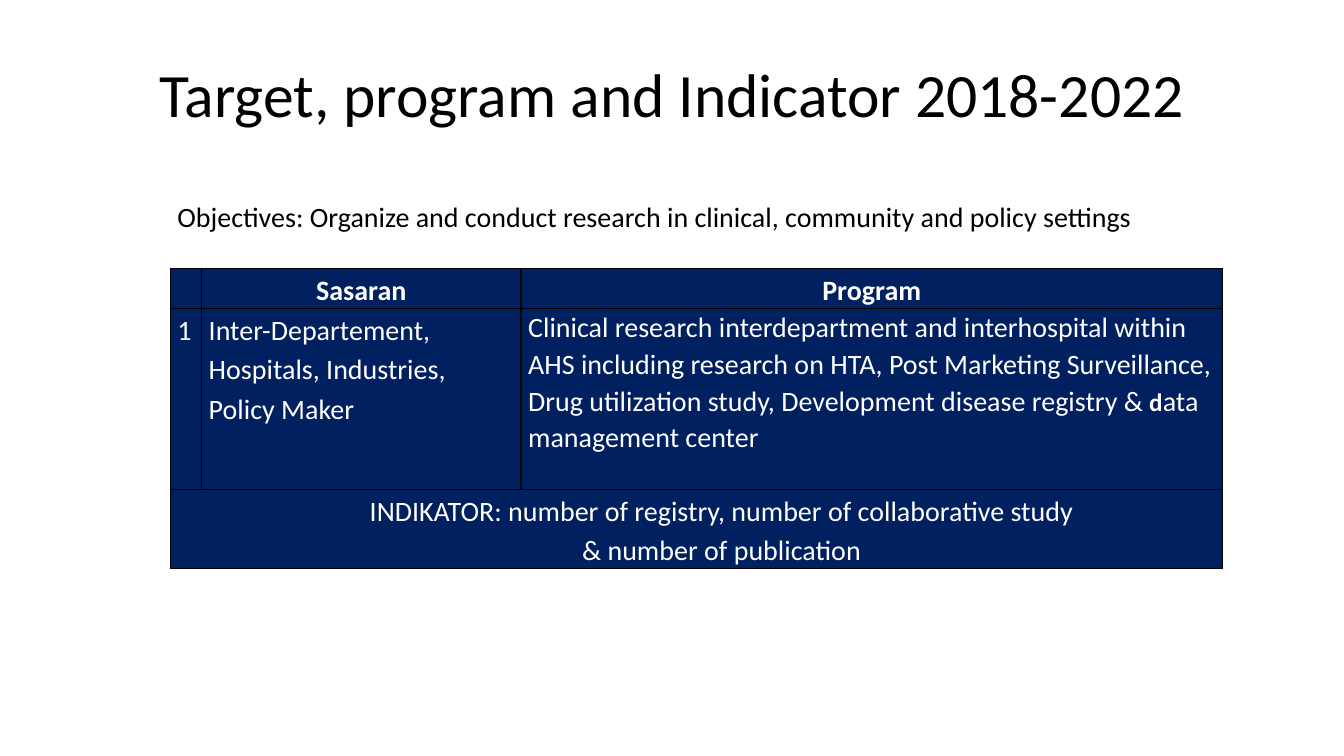
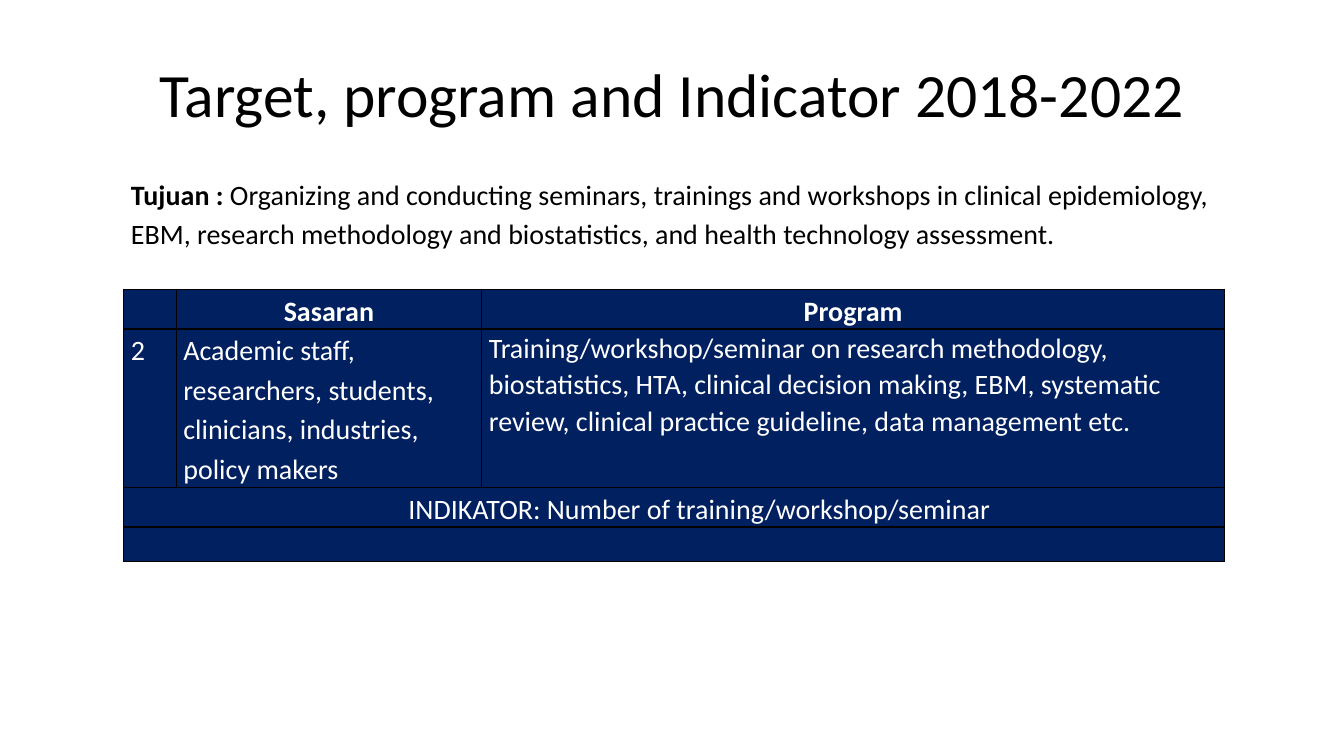
"""Builds two slides that each show a table of targets, programs and indicators."""
from lxml import etree
from pptx import Presentation
from pptx.dml.color import RGBColor
from pptx.enum.text import MSO_ANCHOR, PP_ALIGN
from pptx.oxml import parse_xml
from pptx.oxml.ns import nsdecls, qn
from pptx.util import Cm, Pt

COLORS = {"black": "000000", "white": "FFFFFF", "navy": "002060"}
FONT = "Calibri"
TITLE = "Target, program and Indicator 2018-2022"
HEADINGS = ["", "Sasaran", "Program"]
NO_STYLE = "{2D5ABB26-0587-4C30-8999-92F81FD0307C}"
SIDE_MARGIN = Cm(0.18)
INDICATOR_INDENT = Cm(1.27)

TABLES = [
    {
        "left": 4.29, "top": 4.93,
        "columns": [0.79, 8.05, 17.68],
        "rows": [1.83, 1.02, 4.55, 2.0],
        "objective": [("Objectives: Organize and conduct research in clinical, "
                       "community and policy settings", False, 20)],
        "number": "1",
        "target": "Inter-Departement, Hospitals, Industries, Policy Maker",
        "program": [
            ("Clinical research interdepartment and interhospital within AHS including "
             "research on HTA, Post Marketing Surveillance, Drug utilization study, "
             "Development disease registry &", False, 20),
            (" d", True, 18),
            ("ata management center", False, 20),
        ],
        "indicators": [["INDIKATOR: number of registry, number of collaborative study",
                        "& number of publication"]],
    },
    {
        "left": 3.12, "top": 4.37,
        "columns": [1.32, 7.7, 18.72],
        "rows": [2.92, 1.0, 3.99, 1.0, 0.87],
        "objective": [
            ("Tujuan : ", True, 20),
            ("Organizing and conducting seminars, trainings and workshops in clinical "
             "epidemiology, EBM, research methodology and biostatistics, and health "
             "technology assessment.", False, 20),
        ],
        "number": "2",
        "target": "Academic staff, researchers, students, clinicians, industries, policy makers",
        "program": [("Training/workshop/seminar on research methodology, biostatistics, HTA, "
                     "clinical decision making, EBM, systematic review, clinical practice "
                     "guideline, data management etc.", False, 20)],
        "indicators": [["INDIKATOR: Number of training/workshop/seminar"], [""]],
    },
]


def write_paragraph(paragraph, pieces, color, align=PP_ALIGN.LEFT, spacing=1.15):
    """Write pieces of (text, bold, size) into a paragraph."""
    paragraph.alignment = align
    paragraph.line_spacing = spacing
    paragraph.font.size = Pt(20)
    for text, bold, size in pieces:
        run = paragraph.add_run()
        run.text = text
        run.font.name = FONT
        run.font.size = Pt(size)
        run.font.bold = bold
        run.font.color.rgb = RGBColor.from_string(COLORS[color])


def add_borders(cell):
    """Draw a thin black line on every side of a cell."""
    properties = cell._tc.get_or_add_tcPr()
    for position, side in enumerate(["lnL", "lnR", "lnT", "lnB"]):
        line = parse_xml(f'<a:{side} {nsdecls("a")} w="{Pt(1)}"/>')
        solid = etree.SubElement(line, qn("a:solidFill"))
        etree.SubElement(solid, qn("a:srgbClr"), val=COLORS["black"])
        properties.insert(position, line)


presentation = Presentation()
presentation.slide_width = Cm(33.87)
presentation.slide_height = Cm(19.05)
title_only = presentation.slide_layouts[5]

for content in TABLES:
    slide = presentation.slides.add_slide(title_only)
    title = slide.shapes.title
    title.left, title.top, title.width, title.height = Cm(1.7), Cm(0.76), Cm(30.48), Cm(3.18)
    title.text_frame.text = TITLE
    title.text_frame.vertical_anchor = MSO_ANCHOR.MIDDLE
    title_paragraph = title.text_frame.paragraphs[0]
    title_paragraph.alignment = PP_ALIGN.CENTER
    title_font = title_paragraph.runs[0].font
    title_font.name = FONT
    title_font.size = Pt(44)
    title_font.color.rgb = RGBColor.from_string(COLORS["black"])

    widths, heights = content["columns"], content["rows"]
    frame = slide.shapes.add_table(
        len(heights), len(widths), Cm(content["left"]), Cm(content["top"]),
        Cm(sum(widths)), Cm(sum(heights)))
    table = frame.table
    table.horz_banding = False
    table._tbl.tblPr.find(qn("a:tableStyleId")).text = NO_STYLE
    for column, width in zip(table.columns, widths):
        column.width = Cm(width)

    for row_index, height in enumerate(heights):
        table.rows[row_index].height = Cm(height)
        for cell in table.rows[row_index].cells:
            cell.margin_left = cell.margin_right = SIDE_MARGIN
            cell.margin_top = cell.margin_bottom = 0
            if row_index == 0:
                cell.fill.background()
            else:
                cell.fill.solid()
                cell.fill.fore_color.rgb = RGBColor.from_string(COLORS["navy"])
                add_borders(cell)
        if row_index not in (1, 2):
            table.cell(row_index, 0).merge(table.cell(row_index, len(widths) - 1))

    write_paragraph(table.cell(0, 0).text_frame.paragraphs[0], content["objective"], "black")

    for column_index, heading in enumerate(HEADINGS):
        pieces = [(heading, True, 20)] if heading else []
        paragraph = table.cell(1, column_index).text_frame.paragraphs[0]
        write_paragraph(paragraph, pieces, "white", PP_ALIGN.CENTER)

    body = [[(content["number"], False, 20)], [(content["target"], False, 20)], content["program"]]
    for column_index, (pieces, spacing) in enumerate(zip(body, [1.15, 1.15, 1.07])):
        paragraph = table.cell(2, column_index).text_frame.paragraphs[0]
        write_paragraph(paragraph, pieces, "white", spacing=spacing)

    for row_index, lines in enumerate(content["indicators"], start=3):
        text_frame = table.cell(row_index, 0).text_frame
        for line_index, text in enumerate(lines):
            paragraph = text_frame.add_paragraph() if line_index else text_frame.paragraphs[0]
            pieces = [(text, False, 20)] if text else []
            write_paragraph(paragraph, pieces, "white", PP_ALIGN.CENTER, 1.15 if text else 1.0)
            paragraph._p.get_or_add_pPr().set("marL", str(INDICATOR_INDENT))

presentation.save("out.pptx")
